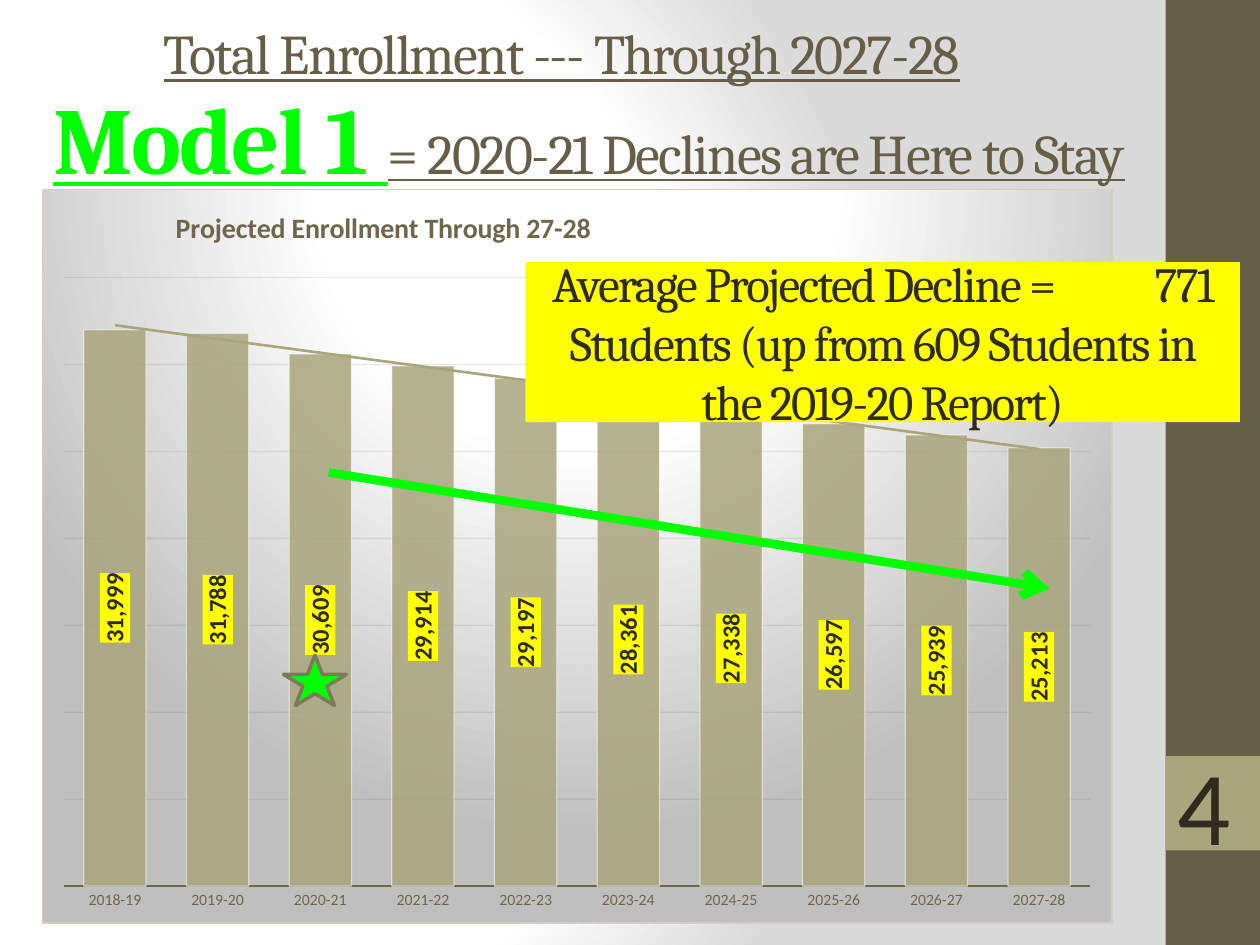
from dataclasses import dataclass
from typing import Optional

from lxml.etree import SubElement
from pptx import Presentation
from pptx.chart.data import CategoryChartData
from pptx.dml.color import RGBColor
from pptx.enum.chart import XL_CHART_TYPE as ChartType, XL_LABEL_POSITION as LabelPosition
from pptx.enum.chart import XL_TICK_LABEL_POSITION as TickLabels, XL_TICK_MARK as TickMark
from pptx.enum.shapes import MSO_CONNECTOR as Connector, MSO_SHAPE as Preset
from pptx.enum.text import MSO_ANCHOR as Anchor, MSO_AUTO_SIZE as AutoSize, PP_ALIGN as Align
from pptx.oxml import parse_xml
from pptx.oxml.ns import nsdecls, qn
from pptx.util import Inches, Pt

COLORS = {
    "brown": "675E47", "olive": "A9A57C", "dark": "2F2B20", "green": "00FF00",
    "yellow": "FFFF00", "axis": "6F664C", "grid": "3C3729", "border": "D3CEBF",
    "star_line": "7D7A5C", "white": "FFFFFF", "page_edge": "DADADA", "chart_edge": "BFBFBF",
}
ENROLLMENT = [31999, 31788, 30609, 29914, 29197, 28361, 27338, 26597, 25939, 25213]
YEARS = [f"20{year}-{year + 1}" for year in range(18, 28)]


@dataclass
class TextRun:
    text: str
    size: float
    color: str
    font: str = "Cambria"
    bold: bool = False
    underline: bool = False
    spacing: float = -1


@dataclass
class Block:
    preset: Preset
    box: tuple
    fill: str
    line: Optional[str] = None


def rgb(name: str) -> RGBColor:
    return RGBColor.from_string(COLORS[name])


def inches(box: tuple) -> list:
    return [Inches(value) for value in box]


def style_font(font, size: float, color: str, name: str = "Calibri", bold: bool = False):
    font.size, font.name, font.bold = Pt(size), name, bold
    font.color.rgb = rgb(color)


def style_line(line, color: str, width: float):
    line.color.rgb = rgb(color)
    line.width = Pt(width)


def add_alpha(properties, percent: int):
    for color in properties.iter(qn("a:srgbClr")):
        SubElement(color, qn("a:alpha")).set("val", str(percent * 1000))


def write_text(shape, runs: list, align=Align.CENTER, anchor=Anchor.MIDDLE):
    frame = shape.text_frame
    frame.word_wrap, frame.auto_size = True, AutoSize.NONE
    frame.vertical_anchor = anchor
    paragraph = frame.paragraphs[0]
    paragraph.alignment = align
    for item in runs:
        run = paragraph.add_run()
        run.text = item.text
        style_font(run.font, item.size, item.color, item.font, item.bold)
        run.font.underline = item.underline
        run.font._element.set("spc", str(int(item.spacing * 100)))


def add_block(slide, block: Block):
    shape = slide.shapes.add_shape(block.preset, *inches(block.box))
    shape.shadow.inherit = False
    shape.fill.solid()
    shape.fill.fore_color.rgb = rgb(block.fill)
    if block.line:
        style_line(shape.line, block.line, 2)
    else:
        shape.line.fill.background()
    return shape


def circle_gradient(stops: list, focus: tuple):
    """Radial gradient; focus gives left, top, right and bottom in percent."""
    stop_xml = "".join(
        f'<a:gs pos="{position * 1000}"><a:srgbClr val="{COLORS[color]}"/></a:gs>'
        for position, color in stops)
    sides = " ".join(f'{side}="{value * 1000}"' for side, value in zip("ltrb", focus))
    return parse_xml(
        f'<a:gradFill {nsdecls("a")} rotWithShape="1"><a:gsLst>{stop_xml}</a:gsLst>'
        f'<a:path path="circle"><a:fillToRect {sides}/></a:path></a:gradFill>')


def set_background(slide):
    slide.background.fill.gradient()
    linear = next(slide.element.iter(qn("a:gradFill")))
    stops = [(0, "white"), (75, "white"), (100, "page_edge")]
    linear.getparent().replace(linear, circle_gradient(stops, (20, 50, 100, 50)))


def manual_layout(x: float, y: float, size: Optional[tuple] = None):
    values = {"xMode": "edge", "yMode": "edge", "x": x, "y": y}
    if size:
        values = {"layoutTarget": "inner", **values, "w": size[0], "h": size[1]}
    body = "".join(f'<c:{tag} val="{value}"/>' for tag, value in values.items())
    return parse_xml(f'<c:layout {nsdecls("c")}><c:manualLayout>{body}</c:manualLayout></c:layout>')


def place(parent, layout, before: str):
    """Put a layout in the parent ahead of the named child."""
    for old in parent.findall(qn("c:layout")):
        parent.remove(old)
    parent.find(qn(before)).addprevious(layout)


def style_chart_area(chart):
    area = parse_xml(
        f'<c:spPr {nsdecls("c", "a")}><a:ln w="{Pt(0.75)}"><a:solidFill>'
        f'<a:srgbClr val="{COLORS["border"]}"/></a:solidFill></a:ln></c:spPr>')
    stops = [(0, "white"), (39, "white"), (100, "chart_edge")]
    area.insert(0, circle_gradient(stops, (50, -80, 50, 180)))
    chart.element.find(qn("c:chart")).addnext(area)


def style_axes(chart):
    category, value = chart.category_axis, chart.value_axis
    category.major_tick_mark = category.minor_tick_mark = TickMark.NONE
    style_font(category.tick_labels.font, 9, "axis")
    style_line(category.format.line, "axis", 1.5)
    value.minimum_scale, value.maximum_scale, value.major_unit = 0, 35000, 5000
    value.major_tick_mark, value.tick_label_position = TickMark.NONE, TickLabels.NONE
    value.visible = False
    gridlines = value.major_gridlines.format.line
    style_line(gridlines, "grid", 0.75)
    add_alpha(value.major_gridlines._xAx.find(qn("c:majorGridlines")), 10)


def style_series(plot):
    plot.gap_width, plot.vary_by_categories = 65, False
    series = plot.series[0]
    series.format.fill.solid()
    series.format.fill.fore_color.rgb = rgb("olive")
    style_line(series.format.line, "white", 0.75)
    properties = series._element.find(qn("c:spPr"))
    add_alpha(properties.find(qn("a:solidFill")), 85)
    add_alpha(properties.find(qn("a:ln")), 50)

    labels = series.data_labels
    labels.show_value, labels.position = True, LabelPosition.CENTER
    labels.number_format, labels.number_format_is_linked = "#,##0", False
    style_font(labels.font, 14, "dark", bold=True)
    text = labels._element.find(qn("c:txPr"))
    text.find(qn("a:bodyPr")).set("rot", "-5400000")
    text.find(qn("a:bodyPr")).set("vert", "horz")
    text.addprevious(parse_xml(
        f'<c:spPr {nsdecls("c", "a")}><a:solidFill>'
        f'<a:srgbClr val="{COLORS["yellow"]}"/></a:solidFill></c:spPr>'))
    series._element.find(qn("c:cat")).addprevious(parse_xml(
        f'<c:trendline {nsdecls("c", "a")}><c:spPr><a:ln w="{Pt(1.5)}"><a:solidFill>'
        f'<a:srgbClr val="{COLORS["olive"]}"/></a:solidFill></a:ln></c:spPr>'
        '<c:trendlineType val="linear"/><c:dispRSqr val="0"/><c:dispEq val="0"/></c:trendline>'))


def add_enrollment_chart(slide):
    data = CategoryChartData()
    data.categories = YEARS
    data.add_series("Series 1", ENROLLMENT)
    chart = slide.shapes.add_chart(
        ChartType.COLUMN_CLUSTERED, *inches((0.33, 1.5, 8.5, 5.83)), data).chart
    chart.has_legend = False
    style_font(chart.font, 10, "dark")
    chart.has_title = True
    run = chart.chart_title.text_frame.paragraphs[0].add_run()
    run.text = "Projected Enrollment Through 27-28"
    style_font(run.font, 16, "axis", bold=True)
    place(chart.chart_title._element, manual_layout(0.12, 0.02), "c:overlay")
    plot_area = chart.element.find(qn("c:chart")).find(qn("c:plotArea"))
    place(plot_area, manual_layout(0.02, 0.12, (0.96, 0.83)), "c:barChart")
    style_axes(chart)
    style_series(chart.plots[0])
    style_chart_area(chart)


def add_trend_arrow(slide):
    arrow = slide.shapes.add_connector(Connector.STRAIGHT, *inches((2.61, 3.75, 8.33, 4.67)))
    style_line(arrow.line, "green", 5)
    SubElement(arrow.line._get_or_add_ln(), qn("a:tailEnd")).set("type", "arrow")
    SubElement(arrow._element.spPr, qn("a:effectLst"))


def main():
    presentation = Presentation()
    presentation.slide_width, presentation.slide_height = Inches(10), Inches(7.5)
    slide = presentation.slides.add_slide(presentation.slide_layouts[5])
    set_background(slide)
    add_block(slide, Block(Preset.RECTANGLE, (9.25, 0, 0.75, 7.5), "brown"))
    add_block(slide, Block(Preset.RECTANGLE, (9.25, 6, 0.75, 0.75), "olive"))

    title = slide.shapes.title
    title.left, title.top, title.width, title.height = inches((0.17, 0, 8.58, 0.83))
    write_text(title, [TextRun("Total Enrollment --- Through 2027-28", 32, "brown", underline=True)])
    page_number = slide.shapes.add_textbox(*inches((9.25, 5.83, 0.58, 1.11)))
    write_text(page_number, [TextRun("4", 60, "dark", "Calibri", spacing=0)], Align.LEFT, Anchor.TOP)
    model = slide.shapes.add_textbox(*inches((0.01, 0.67, 9.33, 0.83)))
    write_text(model, [
        TextRun("Model 1 ", 54, "green", bold=True, underline=True),
        TextRun("= 2020-21 Declines are Here to Stay", 32, "brown", underline=True)])

    add_enrollment_chart(slide)
    callout = add_block(slide, Block(Preset.RECTANGLE, (4.17, 2.08, 5.67, 1.27), "yellow"))
    write_text(callout, [
        TextRun("Average Projected Decline =", 28, "dark"),
        TextRun(" ", 28, "dark", spacing=50),
        TextRun("771 Students (up from 609 Students in the 2019-20 Report)", 28, "dark")])
    add_block(slide, Block(Preset.STAR_5_POINT, (2.25, 5.2, 0.5, 0.4), "green", "star_line"))
    add_trend_arrow(slide)
    presentation.save("out.pptx")


if __name__ == "__main__":
    main()
